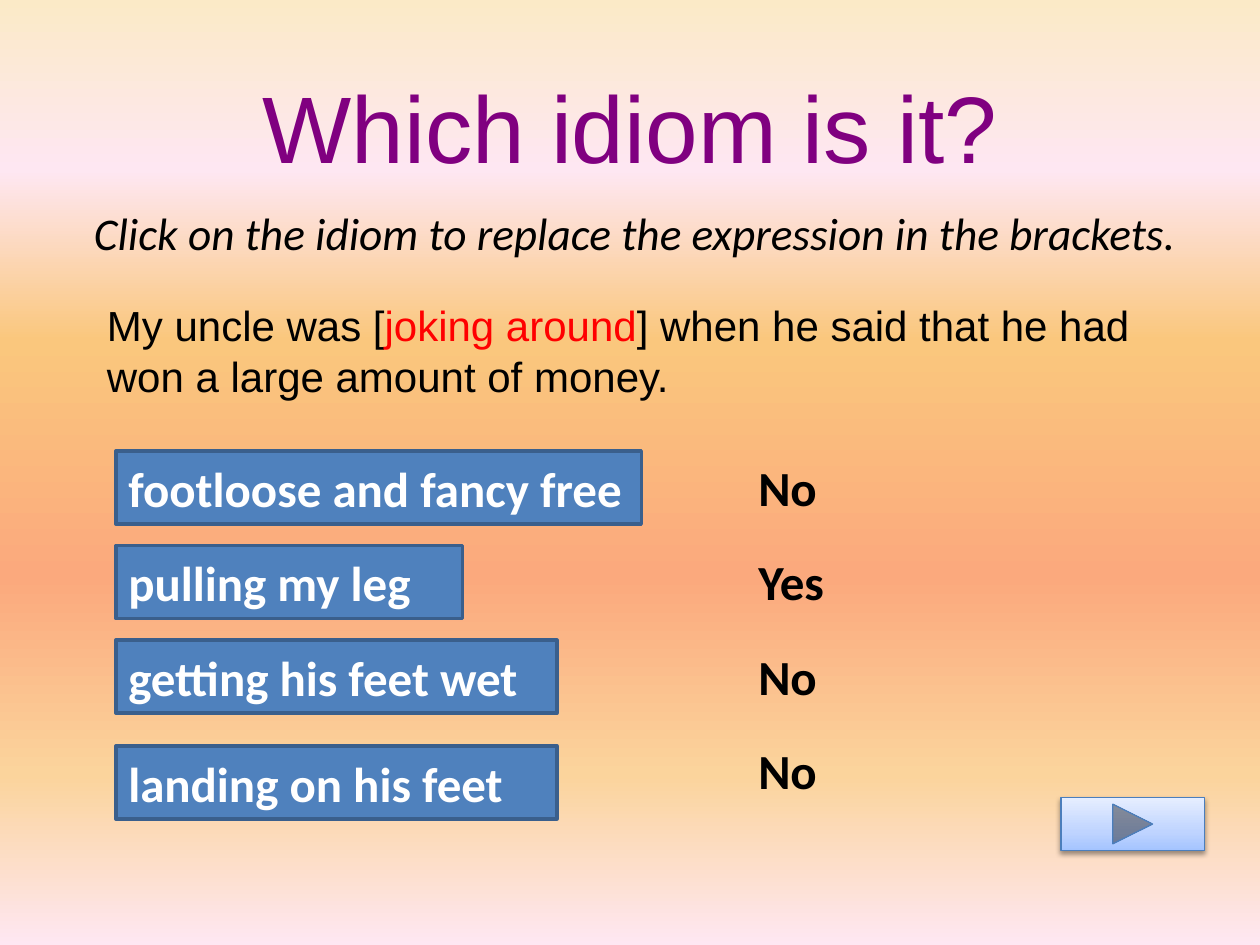
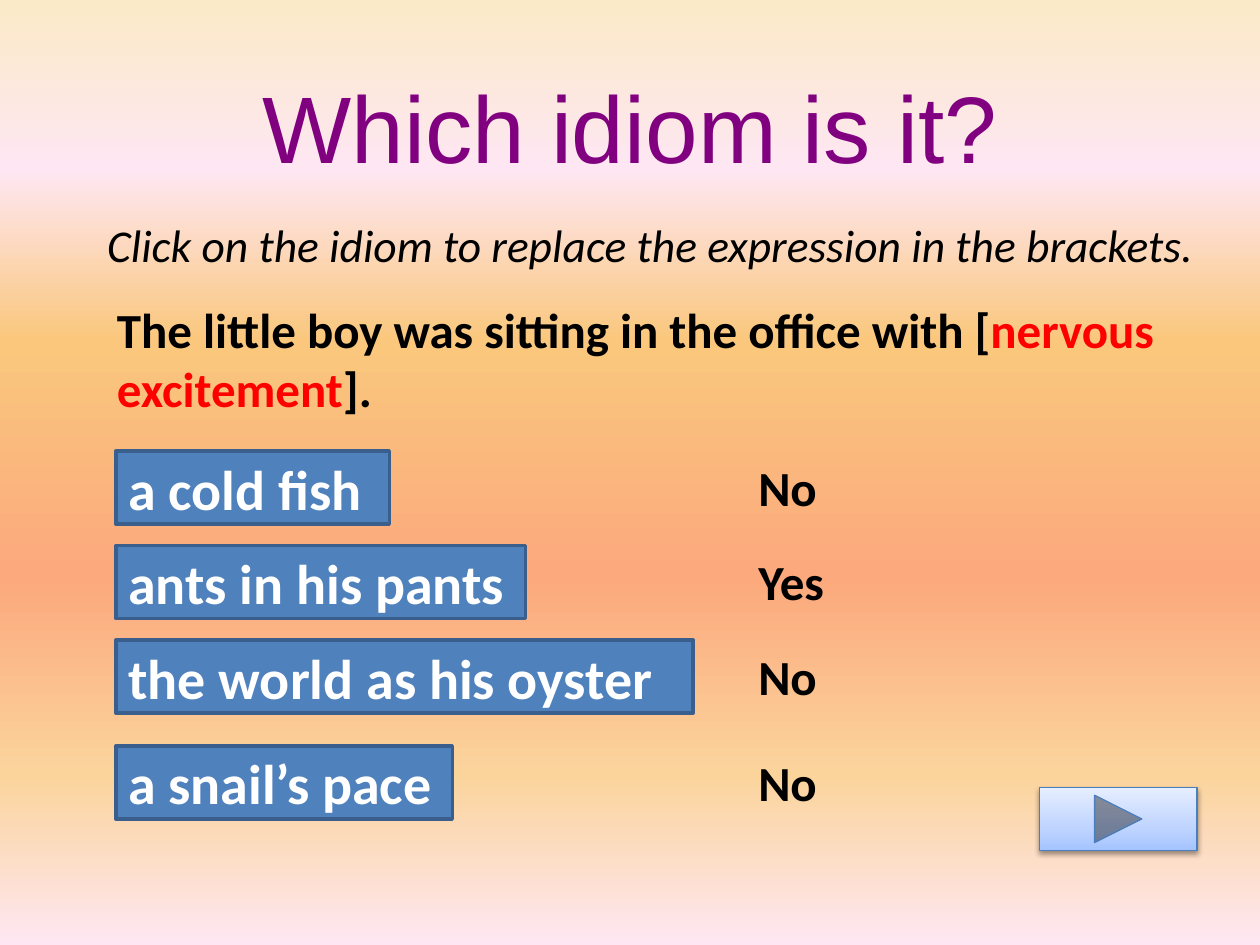
from pptx import Presentation
from pptx.dml.color import RGBColor
from pptx.enum.shapes import MSO_SHAPE
from pptx.enum.text import MSO_ANCHOR, MSO_AUTO_SIZE, PP_ALIGN
from pptx.oxml import parse_xml
from pptx.oxml.ns import nsdecls, qn
from pptx.util import Inches, Pt

HUES = {
    "title": "800080", "text": "000000", "mark": "FF0000", "white": "FFFFFF",
    "fill": "4F81BD", "edge": "3A5F8C", "rim": "4B7EBC",
}
SKY = [(0, "FBEAC7"), (18, "FEE7F2"), (36, "FAC77D"),
       (61, "FBA97D"), (82, "FBD49C"), (100, "FEE7F2")]
GLOSS = [(0, "A4C4FF"), (35, "BFD4FF"), (100, "E6EEFF")]
TOPS = [3.58, 4.33, 5.08, 5.92]

SLIDES = [
    {
        "hint": (0.5, 1.58, 9.08, 0.58), "hint_size": 25.9, "align": PP_ALIGN.CENTER,
        "story": "My uncle was [|joking around|] when he said that he had won a large amount of money.",
        "box": (0.75, 2.33, 8.92, 1.21),
        "style": {"size": 24, "font": "Arial"},
        "size": 28, "last": 5.83, "next": (8.42, 6.33, 1.14, 0.42),
        "rows": [("footloose and fancy free", 4.17, "No"), ("pulling my leg", 2.75, "Yes"),
                 ("getting his feet wet", 3.5, "No"), ("landing on his feet", 3.5, "No")],
    },
    {
        "hint": (0.75, 1.67, 8.83, 0.58), "hint_size": 26, "align": PP_ALIGN.LEFT,
        "story": "The little boy was sitting in the office with [|nervous excitement|].",
        "box": (0.83, 2.33, 8.58, 1.04),
        "style": {"size": 28, "bold": True},
        "size": 32, "last": 5.92, "next": (8.25, 6.25, 1.25, 0.5),
        "rows": [("a cold fish", 2.17, "No"), ("ants in his pants", 3.25, "Yes"),
                 ("the world as his oyster", 4.58, "No"), ("a snail’s pace", 2.67, "No")],
    },
]


def write(shape, text, size=28, font="Calibri", hue="text", bold=False, italic=False,
          align=PP_ALIGN.LEFT, anchor=MSO_ANCHOR.TOP):
    frame = shape.text_frame
    frame.word_wrap = True
    frame.auto_size = MSO_AUTO_SIZE.NONE
    frame.vertical_anchor = anchor
    para = frame.paragraphs[0]
    para.alignment = align
    for i, part in enumerate(text.split("|")):
        run = para.add_run()
        run.text = part
        run.font.size = Pt(size)
        run.font.name = font
        run.font.bold = bold
        run.font.italic = italic
        run.font.color.rgb = RGBColor.from_string(HUES["mark" if i % 2 else hue])
    return para


def blend(fill, root, stops, angle):
    fill.gradient()
    fill.gradient_angle = angle
    items = root.find(".//" + qn("a:gsLst"))
    for old in list(items):
        items.remove(old)
    for spot, hue in stops:
        items.append(parse_xml(
            f'<a:gs {nsdecls("a")} pos="{spot * 1000}"><a:srgbClr val="{hue}"/></a:gs>'))


deck = Presentation()
deck.slide_width, deck.slide_height = Inches(10), Inches(7.5)
master = deck.slide_master
blend(master.background.fill, master.element, SKY, 270)

for data in SLIDES:
    slide = deck.slides.add_slide(deck.slide_layouts[1])
    shapes = slide.shapes
    title, hint = shapes.title, slide.placeholders[1]
    for item, spot in ((title, (0.5, 0.58, 9, 0.83)), (hint, data["hint"])):
        item.left, item.top, item.width, item.height = map(Inches, spot)
    write(title, "Which idiom is it?", size=54, font="Arial", hue="title",
          align=PP_ALIGN.CENTER, anchor=MSO_ANCHOR.MIDDLE)
    para = write(hint, "Click on the idiom to replace the expression in the brackets.",
                 size=data["hint_size"], italic=True, align=data["align"])
    props = para._p.get_or_add_pPr()
    props.set("marL", str(Inches(0.67)))
    props.set("indent", str(Inches(-0.67)))
    props.append(parse_xml(f'<a:buNone {nsdecls("a")}/>'))

    story = shapes.add_textbox(*map(Inches, data["box"]))
    write(story, data["story"], **data["style"])

    for top, (idiom, width, reply) in zip(TOPS, data["rows"]):
        button = shapes.add_shape(MSO_SHAPE.ACTION_BUTTON_CUSTOM,
                                  *map(Inches, (0.92, top, width, 0.58)))
        button.shadow.inherit = False
        button.fill.solid()
        button.fill.fore_color.rgb = RGBColor.from_string(HUES["fill"])
        button.line.color.rgb = RGBColor.from_string(HUES["edge"])
        button.line.width = Pt(2)
        write(button, idiom, size=data["size"], hue="white", bold=True,
              anchor=MSO_ANCHOR.MIDDLE)
        level = data["last"] if top == TOPS[-1] else top
        span = 0.75 if reply == "Yes" else 0.67
        label = shapes.add_textbox(*map(Inches, (5.92, level, span, 0.57)))
        write(label, reply, bold=True)

    arrow = shapes.add_shape(MSO_SHAPE.ACTION_BUTTON_FORWARD_OR_NEXT,
                             *map(Inches, data["next"]))
    blend(arrow.fill, arrow._element, GLOSS, 90)
    arrow.line.color.rgb = RGBColor.from_string(HUES["rim"])
    arrow.line.width = Pt(0.75)
    arrow.shadow.inherit = False
    arrow._element.spPr.find(qn("a:effectLst")).append(parse_xml(
        f'<a:outerShdw {nsdecls("a")} blurRad="{Pt(3.1)}" dist="{Pt(1.6)}" dir="5400000" '
        'rotWithShape="0"><a:srgbClr val="000000"><a:alpha val="38000"/></a:srgbClr>'
        '</a:outerShdw>'))

deck.save("out.pptx")
